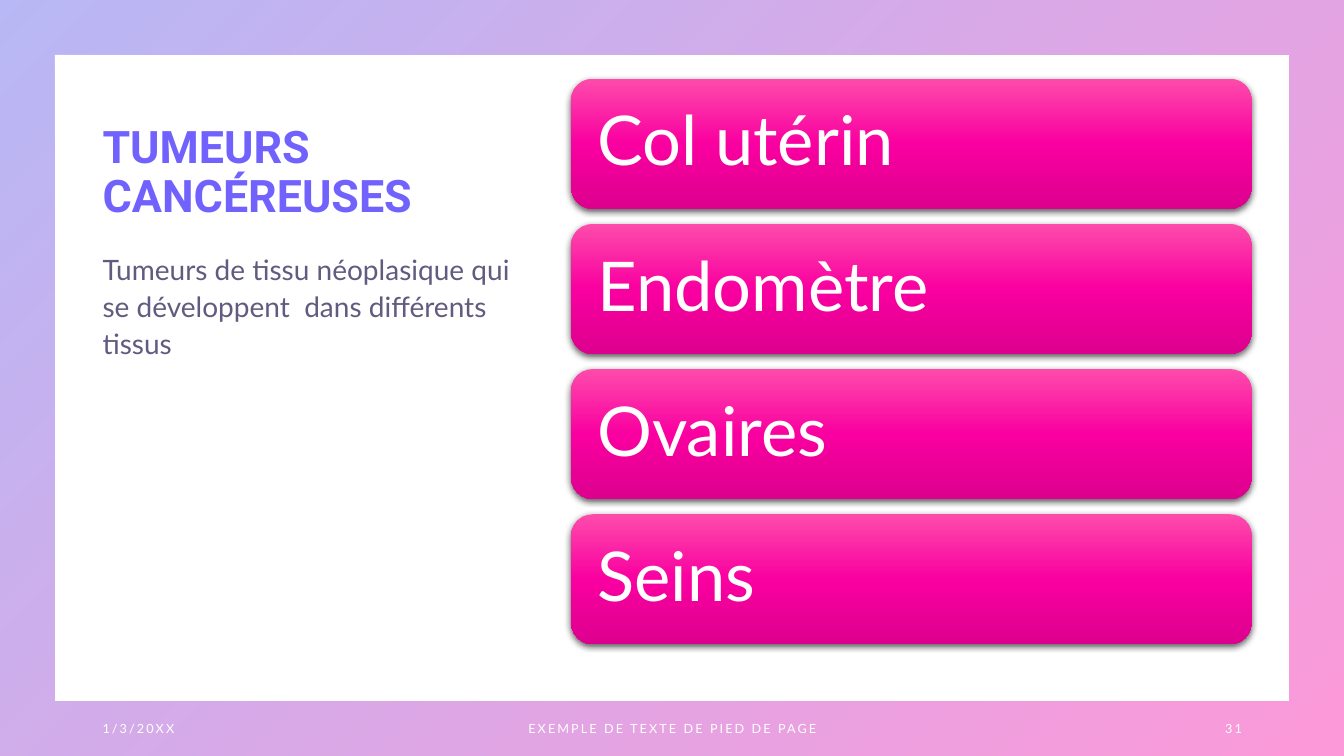
from lxml import etree
from pptx import Presentation
from pptx.dml.color import RGBColor
from pptx.enum.shapes import MSO_SHAPE as SHAPE
from pptx.enum.text import MSO_ANCHOR as ANCHOR, PP_ALIGN as ALIGN
from pptx.oxml import parse_xml
from pptx.oxml.ns import nsdecls, qn
from pptx.util import Pt

CARDS = ["Col utérin", "Endomètre", "Ovaires", "Seins"]
CARD_TOP, CARD_PITCH = 56.2, 103.7


def rgb(value):
    return RGBColor.from_string(value)


def set_gradient(s, stops, angle, alpha=100):
    s.fill.gradient()
    old = s._element.spPr.find(qn("a:gradFill"))
    marks = "".join(
        f'<a:gs pos="{pos * 1000}"><a:srgbClr val="{color}">'
        f'<a:alpha val="{alpha * 1000}"/></a:srgbClr></a:gs>'
        for pos, color in stops)
    old.getparent().replace(old, parse_xml(
        f'<a:gradFill rotWithShape="1" {nsdecls("a")}><a:gsLst>{marks}</a:gsLst>'
        f'<a:lin ang="{angle * 60000}" scaled="0"/></a:gradFill>'))


def set_shadow(s):
    s._element.spPr.append(parse_xml(
        f'<a:effectLst {nsdecls("a")}><a:outerShdw blurRad="{Pt(4.5)}" dist="{Pt(1.5)}" '
        'dir="5400000" algn="ctr" rotWithShape="0"><a:srgbClr val="000000">'
        '<a:alpha val="63000"/></a:srgbClr></a:outerShdw></a:effectLst>'))


def write(tf, text, size, color, font="Lato", bold=False, anchor=ANCHOR.MIDDLE,
          align=ALIGN.LEFT, line=1.0, before=0):
    tf.word_wrap = True
    tf.vertical_anchor = anchor
    p = tf.paragraphs[0]
    p.alignment = align
    p.line_spacing = line
    p.space_before = Pt(before)
    r = p.add_run()
    r.text = text
    r.font.name = font
    r.font.size = Pt(size)
    r.font.bold = bold
    r.font.color.rgb = rgb(color)
    return r


def add_text(slide, x, y, w, h, text, size, color, **style):
    s = slide.shapes.add_textbox(Pt(x), Pt(y), Pt(w), Pt(h))
    return write(s.text_frame, text, size, color, **style)


def add_footer(slide, x, w, text, align):
    r = add_text(slide, x, 506.2, w, 28.8, text, 9, "FFFFFF", align=align)
    r.font._element.set("spc", "150")


def add_frame(slide, w, h):
    s = slide.shapes.add_shape(SHAPE.FRAME, 0, 0, w, h)
    s.adjustments[0] = 0.072
    s.shadow.inherit = False
    s.line.fill.background()
    set_gradient(s, [(0, "4D4EE6"), (100, "F900A0")], 45, alpha=40)


def add_card(slide, y, text):
    s = slide.shapes.add_shape(SHAPE.ROUNDED_RECTANGLE, Pt(408), Pt(y), Pt(486), Pt(92.9))
    s.line.fill.background()
    set_gradient(s, [(0, "FE4BAB"), (50, "F900A0"), (100, "DD008E")], 90)
    set_shadow(s)
    tf = s.text_frame
    tf.margin_left = tf.margin_right = tf.margin_top = tf.margin_bottom = Pt(14.4)
    write(tf, text, 49, "FFFFFF", line=0.9)


def main():
    prs = Presentation()
    prs.slide_width, prs.slide_height = Pt(960), Pt(540)
    slide = prs.slides.add_slide(prs.slide_layouts[6])

    add_frame(slide, prs.slide_width, prs.slide_height)
    add_text(slide, 66.2, 54, 309.6, 108, "TUMEURS CANCÉREUSES", 32, "7162FE",
             font="Roboto", bold=True, anchor=ANCHOR.BOTTOM, line=0.9)
    r = add_text(slide, 66.2, 174.2, 309.6, 288,
                 "Tumeurs de tissu néoplasique qui se développent  dans différents tissus",
                 20, "201449", anchor=ANCHOR.TOP, line=1.1, before=10)
    color = r.font._element.find(".//" + qn("a:srgbClr"))
    etree.SubElement(color, qn("a:alpha")).set("val", "70000")

    add_footer(slide, 66.2, 216, "1/3/20XX", ALIGN.LEFT)
    add_footer(slide, 318.2, 324, "EXEMPLE DE TEXTE DE PIED DE PAGE", ALIGN.CENTER)
    add_footer(slide, 678.2, 216, "31", ALIGN.RIGHT)
    for i, text in enumerate(CARDS):
        add_card(slide, CARD_TOP + i * CARD_PITCH, text)

    prs.save("out.pptx")


if __name__ == "__main__":
    main()
